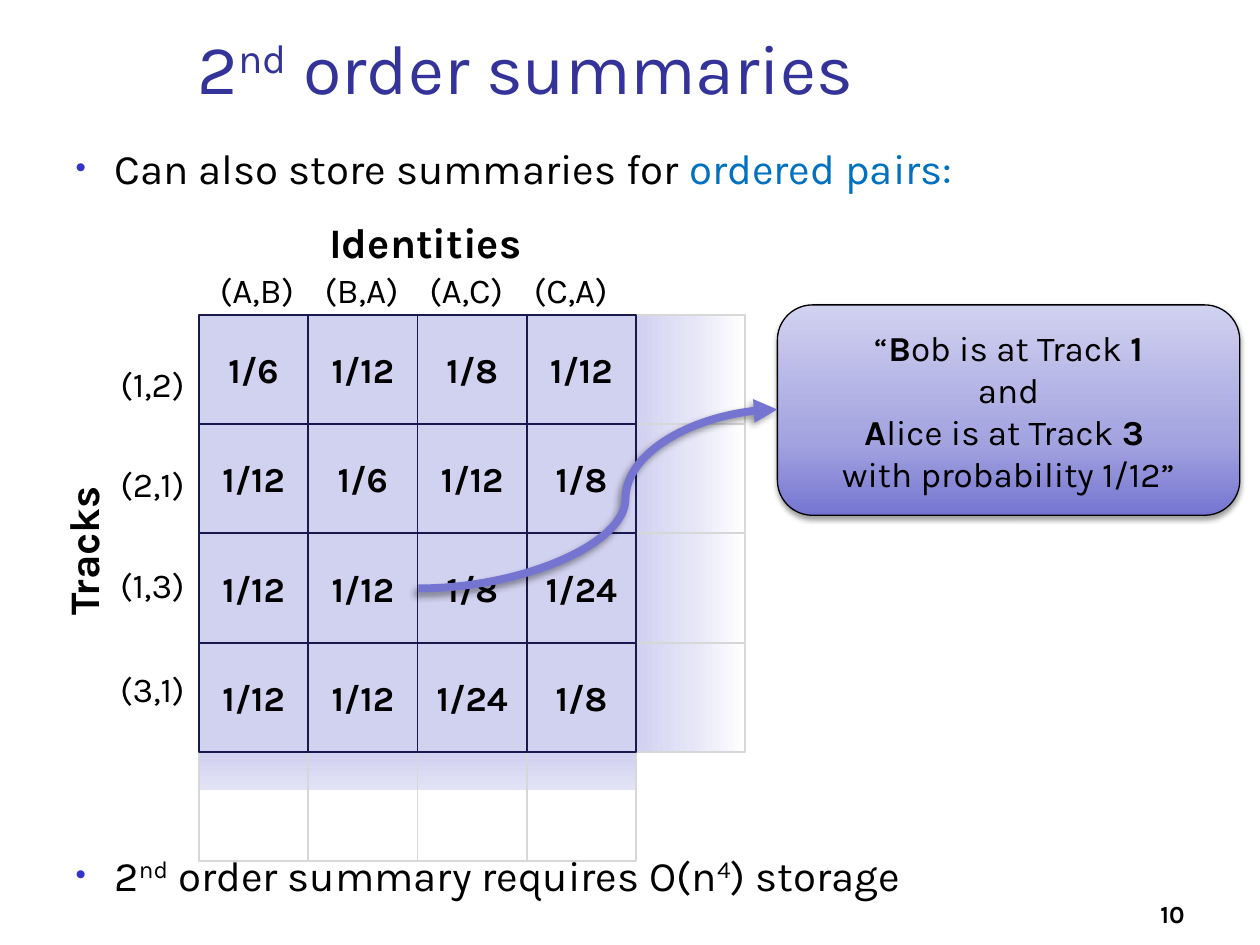
"""Build the slide on second order summaries of track and identity pairs."""
from lxml import etree
from pptx import Presentation
from pptx import util as u
from pptx.dml.color import RGBColor
from pptx.enum import shapes, text
from pptx.oxml import parse_xml
from pptx.oxml.ns import nsdecls, qn

COLORS = {
    "title": "333399", "text": "000000", "accent": "0070C0", "bullet": "3333CC",
    "cell": "D1D1F0", "grid": "19194D", "faint": "D7D7D7", "arrow": "7575D1",
    "mid": "A3A3E0", "fade_down": "E2E2F6", "fade_right": "E5E5F7", "white": "FFFFFF",
}
CENTER, LEFT, RIGHT = text.PP_ALIGN.CENTER, text.PP_ALIGN.LEFT, text.PP_ALIGN.RIGHT
TOP, MIDDLE, BOTTOM = text.MSO_ANCHOR.TOP, text.MSO_ANCHOR.MIDDLE, text.MSO_ANCHOR.BOTTOM
RAISED, BOLD = {"baseline": 30000}, {"bold": True}


def write(shape, lines, size=20, color="text", bold=False, align=CENTER, anchor=TOP, wrap=True):
    """Fill a shape with lines, each a string or a list of (text, format) runs."""
    frame = shape.text_frame
    frame.auto_size = text.MSO_AUTO_SIZE.NONE
    frame.word_wrap = wrap
    frame.vertical_anchor = anchor
    for index, line in enumerate(lines):
        paragraph = frame.paragraphs[0] if index == 0 else frame.add_paragraph()
        paragraph.alignment = align
        for words, style in [(line, {})] if isinstance(line, str) else line:
            run = paragraph.add_run()
            run.text = words
            run.font.name = "Karla"
            run.font.size = u.Pt(size)
            run.font.bold = style.get("bold", bold)
            run.font.color.rgb = RGBColor.from_string(COLORS[style.get("color", color)])
            if "baseline" in style:
                run.font._element.set("baseline", str(style["baseline"]))


def box(kind, left, top, width, height, line, line_width, stops, angle=0):
    """Add an outlined shape with one plain colour or a gradient of (percent, colour) stops."""
    shape = slide.shapes.add_shape(
        kind, u.Inches(left), u.Inches(top), u.Inches(width), u.Inches(height))
    shape.shadow.inherit = False
    shape.line.color.rgb = RGBColor.from_string(COLORS[line])
    shape.line.width = u.Pt(line_width)
    shape.fill.solid()
    shape.fill.fore_color.rgb = RGBColor.from_string(COLORS[stops[0][1]])
    if len(stops) > 1:
        marks = "".join(f'<a:gs pos="{place * 1000}"><a:srgbClr val="{COLORS[name]}"/></a:gs>'
                        for place, name in stops)
        properties = shape._element.spPr
        properties.replace(properties.find(qn("a:solidFill")), parse_xml(
            f'<a:gradFill {nsdecls("a")} rotWithShape="1"><a:gsLst>{marks}</a:gsLst>'
            f'<a:lin ang="{angle * 60000}" scaled="0"/></a:gradFill>'))
    return shape


prs = Presentation()
prs.slide_width, prs.slide_height = u.Inches(10), u.Inches(7.5)
slide = prs.slides.add_slide(prs.slide_layouts[1])

title, points = slide.placeholders[0], slide.placeholders[1]
for holder, place in ((title, (1.47, 0.08, 8.2, 0.83)), (points, (0.5, 1.08, 9.08, 6.42))):
    holder.left, holder.top, holder.width, holder.height = map(u.Inches, place)
write(title, [[("2", {}), ("nd", RAISED), (" order summaries", {})]],
      size=40, color="title", align=LEFT, anchor=BOTTOM)
write(points, [
    [("Can also store summaries for ", {}), ("ordered pairs:", {"color": "accent"})],
    [("2", {}), ("nd", RAISED), (" order summary requires O(n", {}), ("4", RAISED),
     (") storage", {})],
], size=24, align=LEFT)
for point, gap in zip(points.text_frame.paragraphs, (0, 375)):
    layout = point._p.get_or_add_pPr()
    layout.set("marL", str(u.Inches(0.31)))
    layout.set("indent", str(u.Inches(-0.31)))
    bullet_color = etree.SubElement(layout, qn("a:buClr"))
    etree.SubElement(bullet_color, qn("a:srgbClr")).set("val", COLORS["bullet"])
    etree.SubElement(layout, qn("a:buSzPct")).set("val", "70000")
    etree.SubElement(layout, qn("a:buChar")).set("char", "•")
    point.space_before = u.Pt(gap)

identities = ["(A,B)", "(B,A)", "(A,C)", "(C,A)"]
tracks = ["(1,2)", "(2,1)", "(1,3)", "(3,1)"]
labels = [(name, 1.58 + 0.83 * i, 2.08) for i, name in enumerate(identities)]
labels += [(name, 0.75, top) for name, top in zip(tracks, (2.83, 3.62, 4.42, 5.25))]
for name, left, top in labels:
    label = slide.shapes.add_textbox(
        u.Inches(left), u.Inches(top), u.Inches(0.92), u.Inches(0.43))
    write(label, [name])

probabilities = [
    ["1/6", "1/12", "1/8", "1/12"],
    ["1/12", "1/6", "1/12", "1/8"],
    ["1/12", "1/12", "1/8", "1/24"],
    ["1/12", "1/12", "1/24", "1/8"],
]
RECT = shapes.MSO_SHAPE.RECTANGLE
grid_left, grid_top, side = 1.58, 2.5, 0.867
fade_down = [(0, "cell"), (35, "fade_down"), (35, "white")]
fade_right = [(0, "cell"), (50, "fade_right"), (100, "white")]
for i in range(4):
    offset = i * side
    box(RECT, grid_left + offset, grid_top + 4 * side, side, side, "faint", 1, fade_down, 90)
    box(RECT, grid_left + 4 * side, grid_top + offset, side, side, "faint", 1, fade_right)
for row, values in enumerate(probabilities):
    for column, value in enumerate(values):
        cell = box(RECT, grid_left + column * side, grid_top + row * side, side, side,
                   "grid", 1, [(0, "cell")])
        write(cell, [value], bold=True, anchor=MIDDLE, wrap=False)

for name, left, top, width, turn in (("Identities", 2.25, 1.67, 2.25, 0),
                                     ("Tracks", -0.38, 4.12, 2.08, 270)):
    heading = slide.shapes.add_textbox(
        u.Inches(left), u.Inches(top), u.Inches(width), u.Inches(0.5))
    heading.rotation = turn
    write(heading, [name], size=24, bold=True)

callout = box(shapes.MSO_SHAPE.ROUNDED_RECTANGLE, 6.17, 2.42, 3.67, 1.67, "text", 0.75,
              [(0, "arrow"), (35, "mid"), (100, "cell")], 270)
write(callout, [
    [("“", {}), ("B", BOLD), ("ob is at Track ", {}), ("1", BOLD)],
    "and",
    [("A", BOLD), ("lice is at Track ", {}), ("3 ", BOLD)],
    "with probability 1/12”",
], anchor=MIDDLE, wrap=False)

arrow = slide.shapes.add_connector(
    shapes.MSO_CONNECTOR.CURVE, u.Inches(6.17), u.Inches(3.25), u.Inches(3.32), u.Inches(4.67))
arrow.line.color.rgb = RGBColor.from_string(COLORS["arrow"])
arrow.line.width = u.Pt(4.5)
etree.SubElement(arrow.line._get_or_add_ln(), qn("a:headEnd")).set("type", "triangle")
bend = etree.SubElement(arrow._element.spPr.find(qn("a:prstGeom")).find(qn("a:avLst")), qn("a:gd"))
bend.set("name", "adj1")
bend.set("fmla", "val 42300")

for shape, alpha, blur, distance, angle in ((callout, 38, 3.1, 1.6, 90), (arrow, 40, 4, 3, 135)):
    properties = shape._element.spPr
    effects = properties.find(qn("a:effectLst"))
    if effects is None:
        effects = etree.SubElement(properties, qn("a:effectLst"))
    effects.append(parse_xml(
        f'<a:outerShdw {nsdecls("a")} blurRad="{u.Pt(blur)}" dist="{u.Pt(distance)}" '
        f'dir="{angle * 60000}" rotWithShape="0"><a:srgbClr val="{COLORS["text"]}">'
        f'<a:alpha val="{alpha * 1000}"/></a:srgbClr></a:outerShdw>'))

page_number = slide.shapes.add_textbox(
    u.Inches(7.42), u.Inches(6.92), u.Inches(2.08), u.Inches(0.5))
write(page_number, ["10"], size=14, bold=True, align=RIGHT, anchor=BOTTOM)

prs.save("out.pptx")
